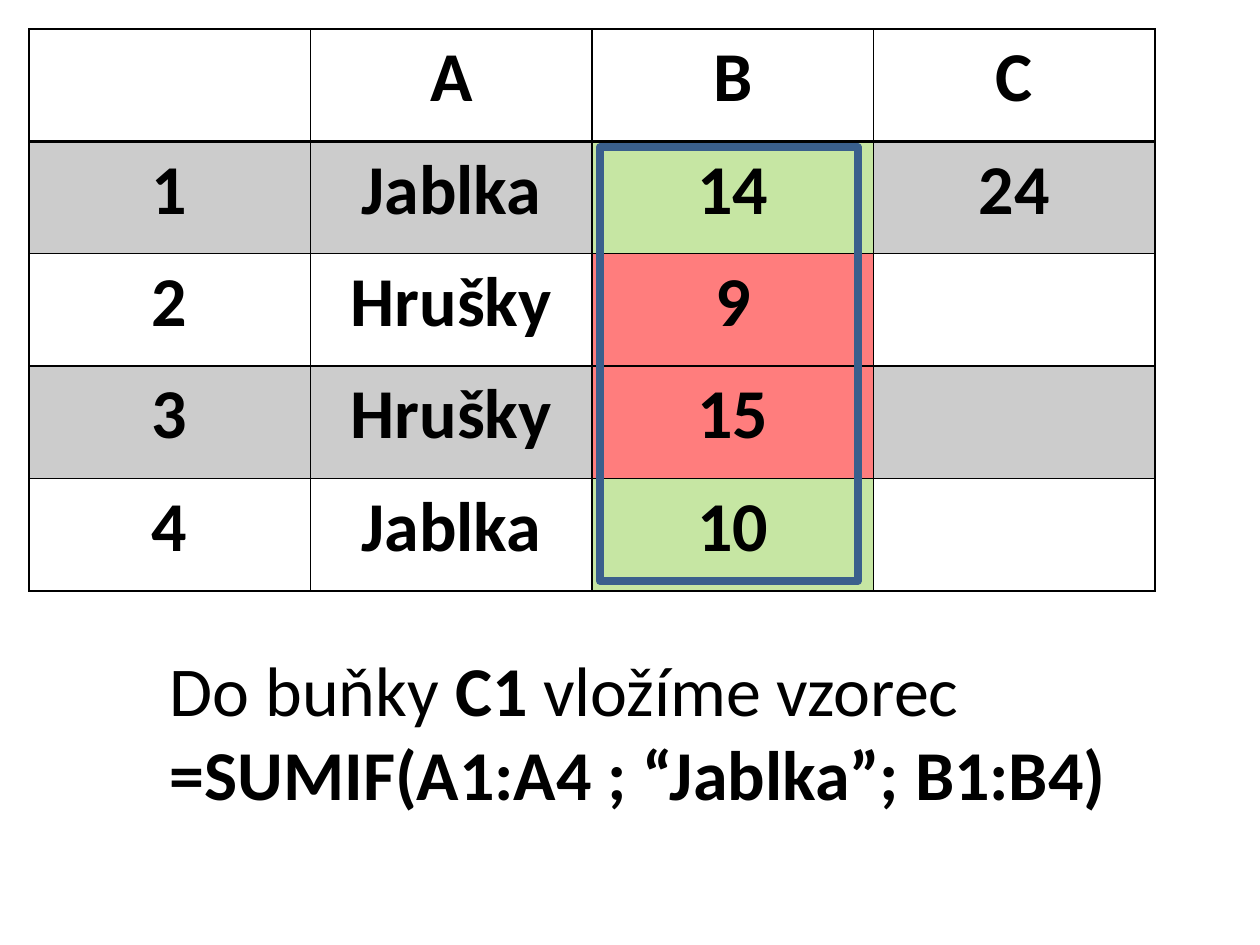
from dataclasses import dataclass
from typing import Optional

from lxml.etree import SubElement
from pptx import Presentation
from pptx.dml.color import RGBColor
from pptx.enum.shapes import MSO_SHAPE
from pptx.enum.text import MSO_AUTO_SIZE, PP_ALIGN
from pptx.oxml.ns import qn
from pptx.util import Pt


@dataclass(frozen=True)
class Tint:
    color: str
    opacity: int  # percent


@dataclass(frozen=True)
class Theme:
    font: str = "Calibri"
    size: float = 40
    ink: str = "000000"
    frame: str = "3A5F8C"
    frame_width: float = 4.5
    grid_width: float = 1
    header_width: float = 2
    band: Tint = Tint("000000", 20)
    counted: Tint = Tint("92D050", 52)
    skipped: Tint = Tint("FF0000", 51)


@dataclass(frozen=True)
class Box:
    left: float
    top: float
    width: float
    height: float

    def lengths(self) -> tuple:
        return Pt(self.left), Pt(self.top), Pt(self.width), Pt(self.height)


THEME = Theme()
SHEET = Box(16.5, 16.5, 643.6, 321.2)
FORMULA = Box(90, 365.8, 568, 104.4)
RANGE_FRAME = Box(342.7, 84.2, 147.6, 247.7)
SEARCHED = "Jablka"
ROWS = [
    ("", "A", "B", "C"),
    ("1", "Jablka", "14", "24"),
    ("2", "Hrušky", "9", ""),
    ("3", "Hrušky", "15", ""),
    ("4", "Jablka", "10", ""),
]
FORMULA_RUNS = [
    ("Do buňky ", False),
    ("C1 ", True),
    ("vložíme vzorec ", False),
    ("=SUMIF(A1:A4 ; “Jablka”; B1:B4)", True),
]


def add_run(paragraph, text: str, bold: bool) -> None:
    run = paragraph.add_run()
    run.text = text
    values = {"name": THEME.font, "size": Pt(THEME.size), "bold": bold}
    for key, value in values.items():
        setattr(run.font, key, value)
    run.font.color.rgb = RGBColor.from_string(THEME.ink)


def add_borders(cell, top: float, bottom: float) -> None:
    side = THEME.grid_width
    properties = cell._tc.get_or_add_tcPr()
    for tag, width in {"lnL": side, "lnR": side, "lnT": top, "lnB": bottom}.items():
        line = SubElement(properties, qn(f"a:{tag}"), w=str(Pt(width)))
        fill = SubElement(line, qn("a:solidFill"))
        SubElement(fill, qn("a:srgbClr"), val=THEME.ink)


def fill_cell(cell, tint: Optional[Tint]) -> None:
    if tint is None:
        cell.fill.background()
        return
    cell.fill.solid()
    cell.fill.fore_color.rgb = RGBColor.from_string(tint.color)
    color = cell._tc.tcPr.find(f"{qn('a:solidFill')}/{qn('a:srgbClr')}")
    SubElement(color, qn("a:alpha"), val=str(tint.opacity * 1000))


def cell_tint(row: int, column: int) -> Optional[Tint]:
    if row == 0:
        return None
    if column == 2:
        return THEME.counted if ROWS[row][1] == SEARCHED else THEME.skipped
    return THEME.band if row % 2 else None


def add_sheet(slide) -> None:
    sheet = slide.shapes.add_table(len(ROWS), len(ROWS[0]), *SHEET.lengths()).table
    sheet.first_row = sheet.horz_banding = False
    for r, texts in enumerate(ROWS):
        for c, text in enumerate(texts):
            cell = sheet.cell(r, c)
            # The rule under the header is shared by the first two rows
            add_borders(
                cell,
                top=THEME.header_width if r == 1 else THEME.grid_width,
                bottom=THEME.header_width if r == 0 else THEME.grid_width,
            )
            fill_cell(cell, cell_tint(r, c))
            if text:
                paragraph = cell.text_frame.paragraphs[0]
                paragraph.alignment = PP_ALIGN.CENTER
                add_run(paragraph, text, bold=True)


def add_formula(slide) -> None:
    frame = slide.shapes.add_textbox(*FORMULA.lengths()).text_frame
    frame.word_wrap = True
    frame.auto_size = MSO_AUTO_SIZE.SHAPE_TO_FIT_TEXT
    for text, bold in FORMULA_RUNS:
        add_run(frame.paragraphs[0], text, bold)


def add_range_frame(slide) -> None:
    outline = slide.shapes.add_shape(MSO_SHAPE.RECTANGLE, *RANGE_FRAME.lengths())
    outline.shadow.inherit = False
    outline.fill.background()
    outline.line.color.rgb = RGBColor.from_string(THEME.frame)
    outline.line.width = Pt(THEME.frame_width)
    SubElement(outline.line._get_or_add_ln(), qn("a:round"))


def main() -> None:
    presentation = Presentation()
    presentation.slide_width, presentation.slide_height = Pt(720), Pt(540)
    slide = presentation.slides.add_slide(presentation.slide_layouts[6])
    # Spreadsheet, its explanation, and the frame round the summed range
    add_sheet(slide)
    add_formula(slide)
    add_range_frame(slide)
    presentation.save("out.pptx")


if __name__ == "__main__":
    main()
